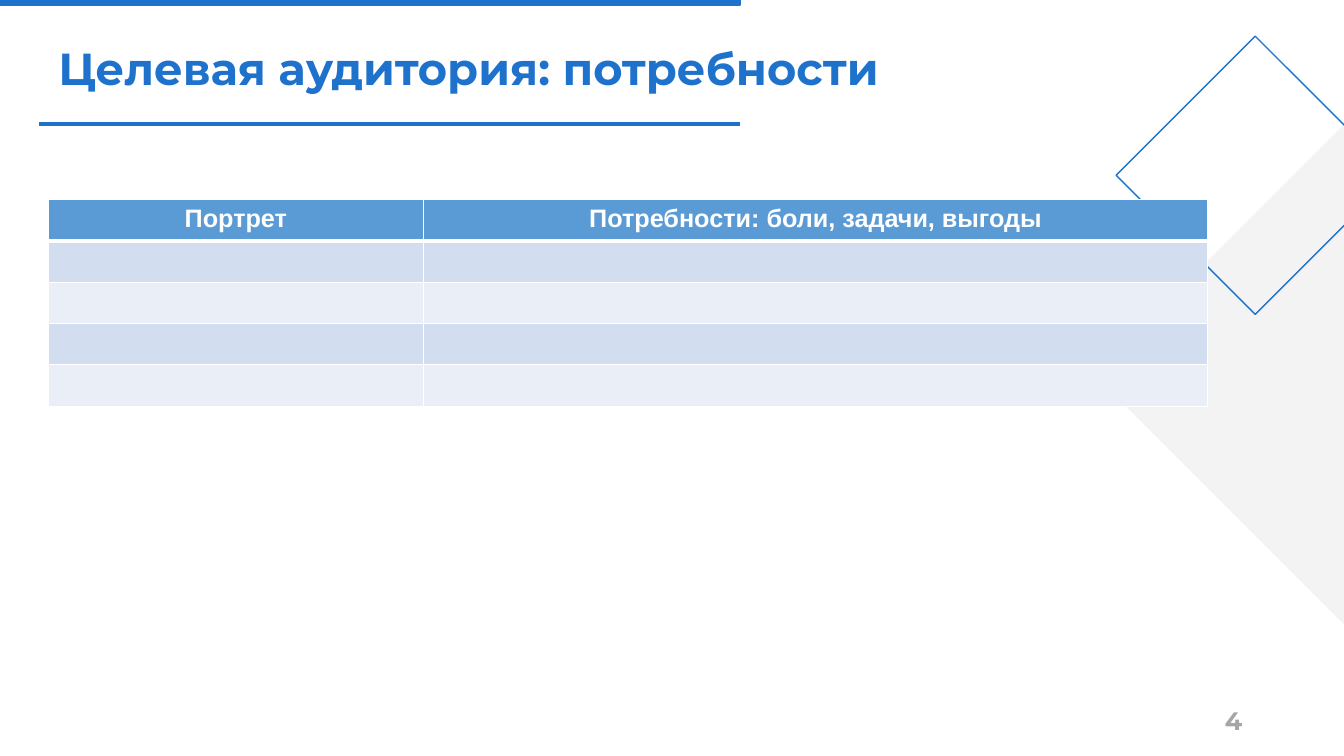
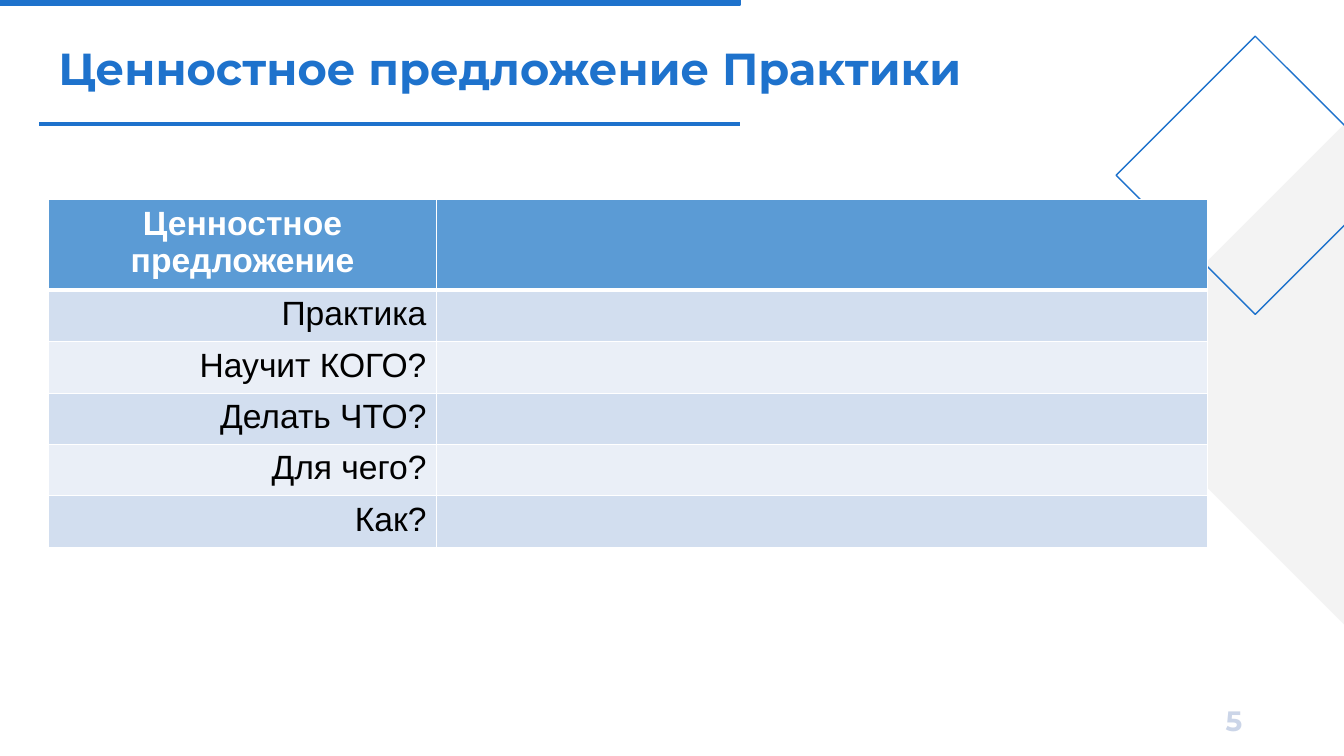
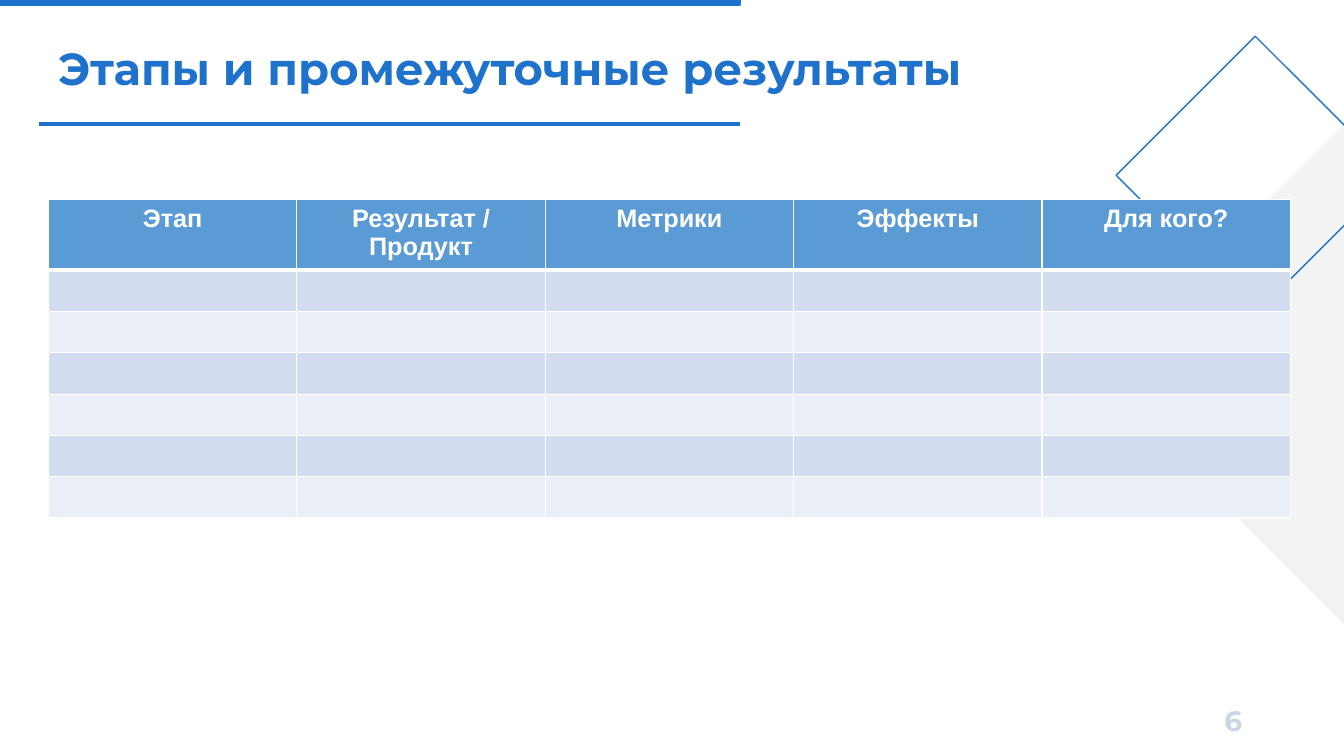
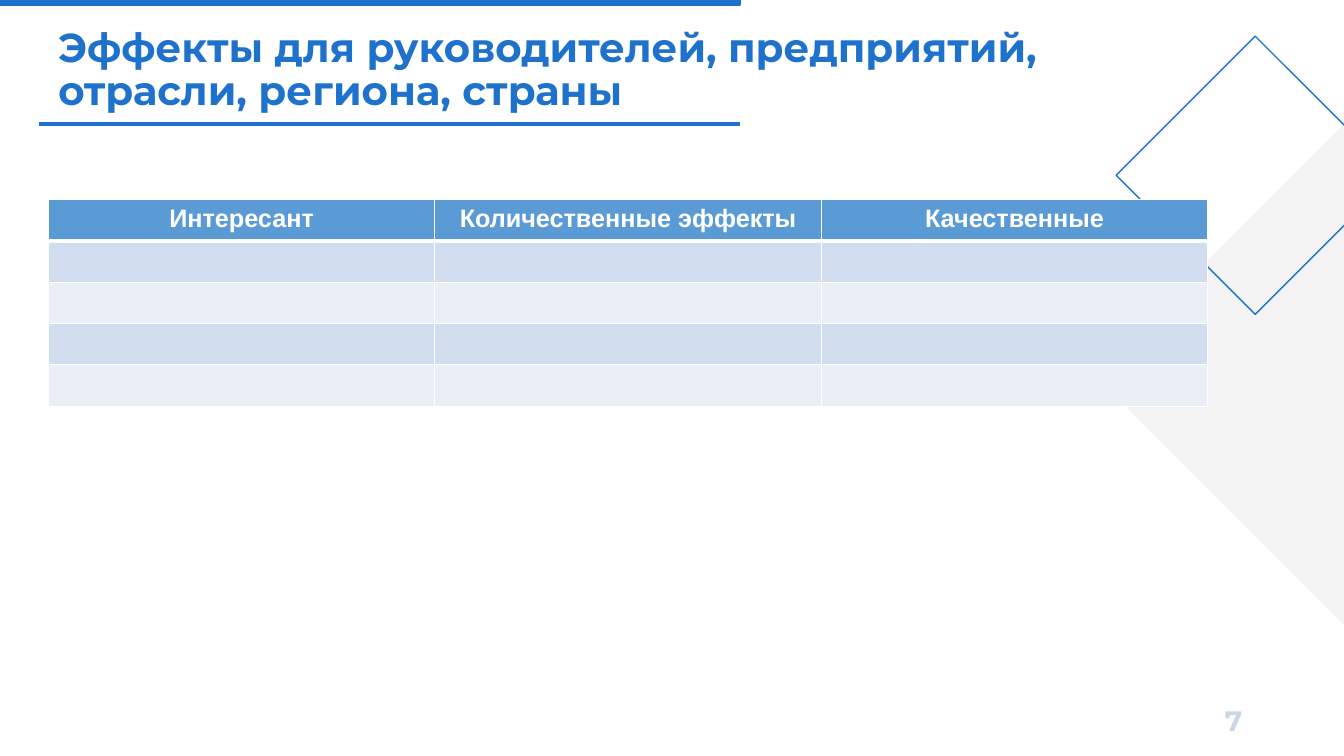
from lxml import etree
from pptx import Presentation
from pptx.dml.color import RGBColor
from pptx.enum.shapes import MSO_CONNECTOR, MSO_SHAPE
from pptx.enum.text import MSO_ANCHOR, PP_ALIGN
from pptx.oxml.ns import qn
from pptx.util import Inches, Pt

RECTANGLE, DIAMOND = MSO_SHAPE.RECTANGLE, MSO_SHAPE.DIAMOND
STRAIGHT = MSO_CONNECTOR.STRAIGHT
MIDDLE = MSO_ANCHOR.MIDDLE
LEFT, CENTER, RIGHT = PP_ALIGN.LEFT, PP_ALIGN.CENTER, PP_ALIGN.RIGHT

COLORS = {
    "accent": "1E72CC",
    "diamond": "E6E6E6",
    "header": "5B9BD5",
    "band_dark": "D2DEEF",
    "band_light": "EAEFF7",
    "white": "FFFFFF",
    "black": "000000",
    "number": "CBD5E8",
    "number_gray": "A6A6A6",
}
TITLE_FONT, TABLE_FONT = "Montserrat", "Arial"

SLIDE_WIDTH, SLIDE_HEIGHT = 13.33, 7.5
MARGIN = 0.48
CONTENT_WIDTH = 11.5
BAND_WIDTH = 7.34
RULE_LEFT, RULE_TOP = 0.39, 1.23
TABLE_TOP = 1.98
ROW_HEIGHT = 0.41


def rgb(name):
    return RGBColor.from_string(COLORS[name])


def inches(*lengths):
    return [Inches(length) for length in lengths]


def add_span(para, text, font, size, color, bold=True):
    span = para.add_run()
    span.text = text
    span.font.name = font
    span.font.size = Pt(size)
    span.font.bold = bold
    span.font.color.rgb = rgb(color)


def add_text(page, area, text, size, color, align=LEFT, spacing=1.0):
    box = page.shapes.add_textbox(*inches(*area))
    frame = box.text_frame
    frame.word_wrap = True
    frame.vertical_anchor = MIDDLE
    para = frame.paragraphs[0]
    para.alignment = align
    para.line_spacing = spacing
    add_span(para, text, TITLE_FONT, size, color)


def add_figure(page, kind, area, fill=None, line=None, opacity=100):
    """Add a preset shape; opacity is a percentage of its fill."""
    shape = page.shapes.add_shape(kind, *inches(*area))
    shape.shadow.inherit = False
    if fill:
        shape.fill.solid()
        shape.fill.fore_color.rgb = rgb(fill)
        if opacity < 100:
            color = shape.fill._xPr.find(".//" + qn("a:srgbClr"))
            etree.SubElement(color, qn("a:alpha"), val=str(opacity * 1000))
    else:
        shape.fill.background()
    if line:
        shape.line.color.rgb = rgb(line)
        shape.line.width = Pt(1)
    else:
        shape.line.fill.background()


def add_rule(page):
    rule = page.shapes.add_connector(
        STRAIGHT, *inches(RULE_LEFT, RULE_TOP, BAND_WIDTH, RULE_TOP))
    rule.line.color.rgb = rgb("accent")
    rule.line.width = Pt(2.25)
    etree.SubElement(rule._element.spPr, qn("a:effectLst"))


def add_page(deck, title, number, title_size=32, number_size=20, number_color="number"):
    """Add a slide with the shared decoration, its title and its number."""
    page = deck.slides.add_slide(deck.slide_layouts[6])
    add_rule(page)
    add_figure(page, RECTANGLE, (0, 0, BAND_WIDTH, 0.05), "accent", "accent")
    add_figure(page, DIAMOND, (10.85, 1.23, 4.97, 4.97), "diamond", opacity=46)
    add_figure(page, DIAMOND, (11.07, 0.36, 2.76, 2.76), line="accent")
    add_text(page, (MARGIN, 0.39, CONTENT_WIDTH, 0.63), title, title_size,
             "accent", spacing=0.9)
    add_text(page, (9.42, 6.95, 3, 0.4), str(number), number_size,
             number_color, RIGHT)
    return page


def set_borders(cell, top, bottom):
    """Draw white cell borders; widths are in points."""
    properties = cell._tc.get_or_add_tcPr()
    for side, width in (("L", 1), ("R", 1), ("T", top), ("B", bottom)):
        line = etree.SubElement(properties, qn("a:ln" + side), w=str(Pt(width)))
        fill = etree.SubElement(line, qn("a:solidFill"))
        etree.SubElement(fill, qn("a:srgbClr"), val=COLORS["white"])


def style_cell(cell, row, text, size):
    set_borders(cell, top=3 if row == 1 else 1, bottom=3 if row == 0 else 1)
    cell.fill.solid()
    band = "band_dark" if row % 2 else "band_light"
    cell.fill.fore_color.rgb = rgb("header" if row == 0 else band)
    if text:
        para = cell.text_frame.paragraphs[0]
        para.alignment = RIGHT if row else CENTER
        add_span(para, text, TABLE_FONT, size, "black" if row else "white", row == 0)


def add_grid(page, headers, labels, widths, size=18,
             header_height=ROW_HEIGHT, row_height=ROW_HEIGHT):
    """Add a banded table; labels fill the first column below the header."""
    heights = [header_height] + [row_height] * len(labels)
    frame = page.shapes.add_table(
        len(heights), len(widths),
        *inches(MARGIN, TABLE_TOP, sum(widths), sum(heights)))
    table = frame.table
    for column, width in zip(table.columns, widths):
        column.width = Inches(width)
    for row, height in zip(table.rows, heights):
        row.height = Inches(height)
    blanks = [""] * (len(widths) - 1)
    texts = [headers] + [[label] + blanks for label in labels]
    for row, line in enumerate(texts):
        for column, text in enumerate(line):
            style_cell(table.cell(row, column), row, text, size)


def main():
    deck = Presentation()
    deck.slide_width, deck.slide_height = inches(SLIDE_WIDTH, SLIDE_HEIGHT)

    page = add_page(deck, "Целевая аудитория: потребности", 4,
                    number_size=18, number_color="number_gray")
    add_grid(page, ["Портрет", "Потребности: боли, задачи, выгоды"],
             [""] * 4, [3.72, 7.78])

    page = add_page(deck, "Ценностное предложение Практики", 5)
    add_grid(page, ["Ценностное предложение", ""],
             ["Практика", "Научит КОГО?", "Делать ЧТО?", "Для чего?", "Как?"],
             [3.85, 7.65], size=24, header_height=0.84, row_height=0.51)

    page = add_page(deck, "Этапы и промежуточные результаты", 6)
    add_grid(page, ["Этап", "Результат / Продукт", "Метрики", "Эффекты", "Для кого?"],
             [""] * 6, [12.32 / 5] * 5, header_height=0.66)

    page = add_page(
        deck, "Эффекты для руководителей, предприятий, отрасли, региона, страны",
        7, title_size=28.8)
    add_grid(page, ["Интересант", "Количественные эффекты", "Качественные"],
             [""] * 4, [CONTENT_WIDTH / 3] * 3)

    deck.save("out.pptx")


if __name__ == "__main__":
    main()
